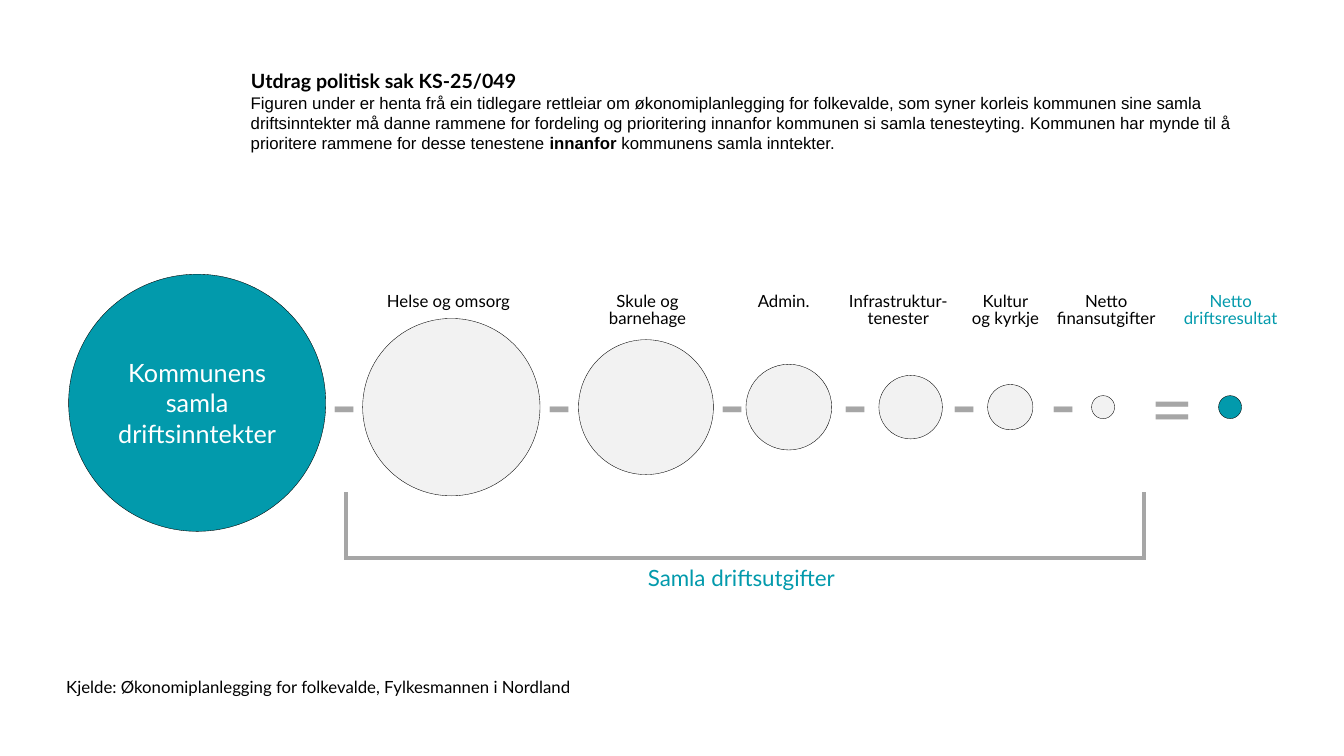
import pptx
import pptx.util
import pptx.dml.color
import pptx.enum.shapes
import pptx.enum.text
import pptx.oxml

Cm = pptx.util.Cm
Pt = pptx.util.Pt
Align = pptx.enum.text.PP_ALIGN
Anchor = pptx.enum.text.MSO_ANCHOR

COLOURS = {"teal": "029AAC", "pale": "F2F2F2", "grey": "A6A6A6", "black": "000000", "white": "FFFFFF"}
AXIS = 10.26
LABEL_TOP = 7.29

EXPENSES = [
    (9.14, 4.47, "Helse og omsorg", 9.07, 4.47, 8.08),
    (14.58, 3.4, "Skule og barnehage", 14.58, 3.48, 13.49),
    (18.8, 2.16, "Admin.", 18.67, 2.16, 17.86),
    (22.15, 1.6, "Infrastruktur-tenester", 20.9, 3.48, 20.96),
    (24.89, 1.14, "Kultur\vog kyrkje", 23.6, 3.48, 23.7),
    (27.51, 0.58, "Netto finansutgifter", 26.14, 3.48, 26.19),
]


class Figure:
    def __init__(self, page, font="Lato"):
        self.page = page
        self.font = font

    def colour(self, name):
        return pptx.dml.color.RGBColor.from_string(COLOURS[name])

    def style(self, span, size, colour, font=None, bold=False):
        values = {"name": font or self.font, "size": Pt(size), "bold": bold}
        for name, value in values.items():
            setattr(span.font, name, value)
        span.font.color.rgb = self.colour(colour)

    def frame(self, box, **values):
        for name, value in {"word_wrap": True, **values}.items():
            setattr(box.text_frame, name, value)
        return box.text_frame.paragraphs[0]

    def place(self, box, left, top, width, height):
        values = {"left": left, "top": top, "width": width, "height": height}
        for name, value in values.items():
            setattr(box, name, Cm(value))

    def title(self, text, area, size):
        box = self.page.shapes.title
        self.place(box, *area)
        para = self.frame(box, vertical_anchor=Anchor.TOP, auto_size=pptx.enum.text.MSO_AUTO_SIZE.NONE)
        para.text = text
        para.alignment = Align.LEFT
        self.style(para.runs[0], size, "black", bold=True)

    def text(self, text, area, size=12, colour="black", align=Align.LEFT, spacing=None):
        box = self.page.shapes.add_textbox(*map(Cm, area))
        para = self.frame(box)
        para.text = text
        para.alignment = align
        para.line_spacing = spacing
        for span in para.runs:
            self.style(span, size, colour)

    def label(self, text, area, size=12, colour="black"):
        self.text(text, area, size, colour, Align.CENTER, Pt(12))

    def passage(self, pieces, area, size, font):
        box = self.page.shapes.add_textbox(*map(Cm, area))
        para = self.frame(box)
        for text, bold in pieces:
            span = para.add_run()
            span.text = text
            self.style(span, size, "black", font, bold)

    def circle(self, left, diameter, fill, middle=AXIS, text=""):
        area = (left, middle - diameter / 2, diameter, diameter)
        shape = self.page.shapes.add_shape(pptx.enum.shapes.MSO_SHAPE.OVAL, *map(Cm, area))
        shape.shadow.inherit = False
        shape.fill.solid()
        shape.fill.fore_color.rgb = self.colour(fill)
        shape.line.color.rgb = self.colour("black")
        shape.line.width = Pt(0.25)
        if text:
            margins = dict.fromkeys(("margin_left", "margin_top", "margin_right", "margin_bottom"), 0)
            para = self.frame(shape, vertical_anchor=Anchor.MIDDLE, **margins)
            para.text = text
            para.alignment = Align.CENTER
            self.style(para.runs[0], 18, "white")

    def sign(self, text, left, top=8.86, width=0.81):
        self.text(text, (left, top, width, 2.57), 54, "grey")

    def line(self, *ends):
        line = self.page.shapes.add_connector(pptx.enum.shapes.MSO_CONNECTOR.STRAIGHT, *map(Cm, ends))
        line.line.color.rgb = self.colour("grey")
        line.line.width = Pt(3)
        properties = line._element.spPr
        properties.append(properties.makeelement(pptx.oxml.ns.qn("a:effectLst"), {}))


def main():
    deck = pptx.Presentation()
    deck.slide_width = Cm(33.87)
    deck.slide_height = Cm(19.05)
    figure = Figure(deck.slides.add_slide(deck.slide_layouts[5]))

    figure.title("Utdrag politisk sak KS-25/049", (6.07, 1.6, 25.43, 0.85), 14)
    figure.passage(
        [
            ("Figuren under er henta frå ein tidlegare rettleiar om økonomiplanlegging for folkevalde, "
             "som syner korleis kommunen sine samla driftsinntekter må danne rammene for fordeling og "
             "prioritering innanfor kommunen si samla tenesteyting. Kommunen har mynde til å prioritere "
             "rammene for desse tenestene ", False),
            ("innanfor ", True),
            ("kommunens samla inntekter.", False),
        ],
        (6.07, 2.2, 25.43, 1.8), 12, "Arial",
    )

    figure.circle(1.73, 6.48, "teal", 10.15, "Kommunens samla driftsinntekter")
    for left, diameter, name, label_left, label_width, minus_left in EXPENSES:
        figure.sign("-", minus_left)
        figure.circle(left, diameter, "pale")
        figure.label(name, (label_left, LABEL_TOP, label_width, 1.12))
    figure.sign("=", 28.75, 8.97, 1.96)
    figure.circle(30.71, 0.58, "teal")
    figure.label("Netto driftsresultat", (29.29, LABEL_TOP, 3.45, 1.12), colour="teal")

    start, end, top, base = 8.71, 28.83, 12.4, 14.07
    for side in (start, end):
        figure.line(side, top, side, base + 0.05)
    figure.line(start, base, end, base)
    figure.label("Samla driftsutgifter", (15.7, 14.35, 5.97, 0.74), 16, "teal")

    figure.text("Kjelde: Økonomiplanlegging for folkevalde, Fylkesmannen i Nordland", (1.42, 16.94, 13.44, 0.76))
    deck.save("out.pptx")


if __name__ == "__main__":
    main()
